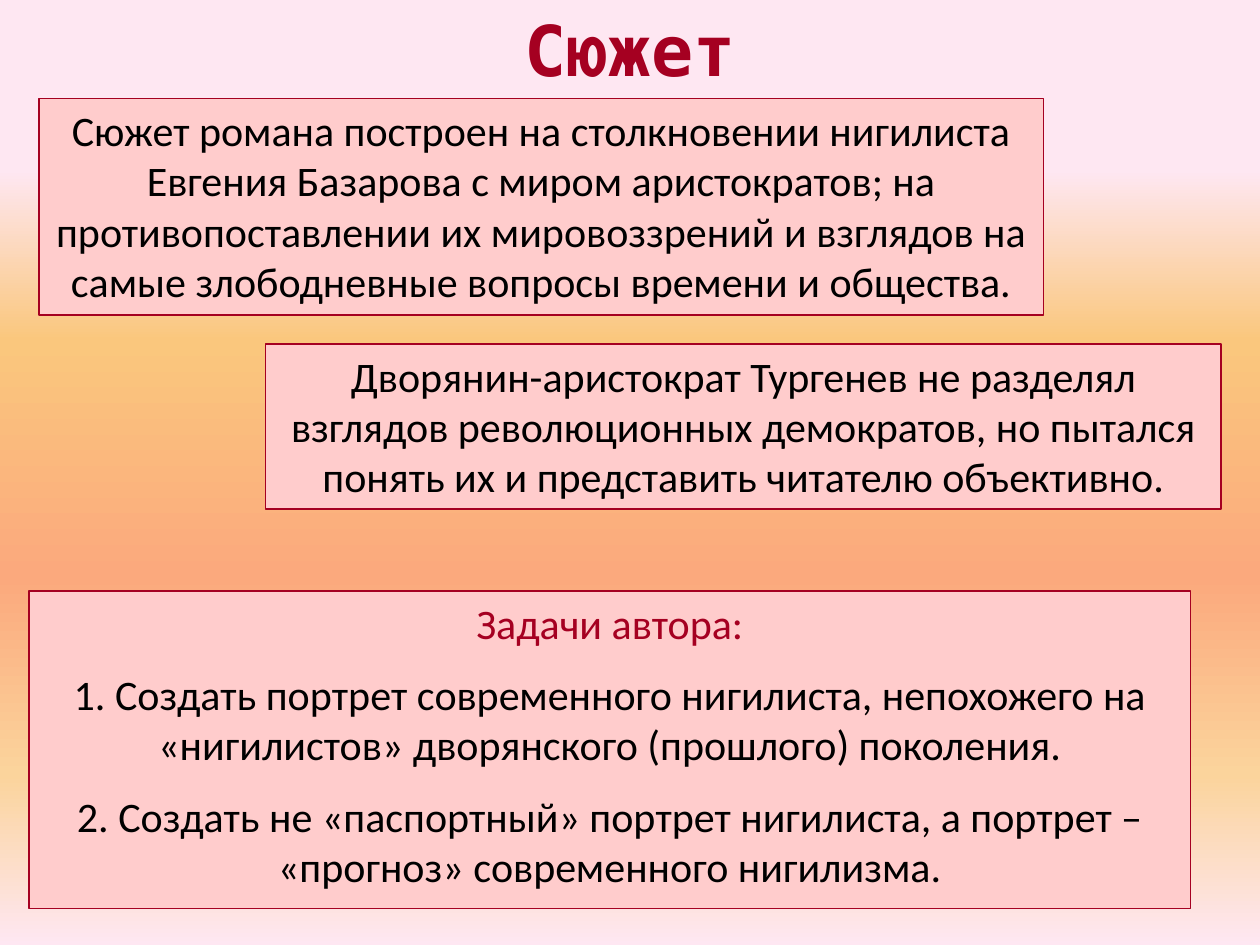
from lxml import etree
from pptx import Presentation
from pptx import util as u
from pptx.dml.color import RGBColor
from pptx.enum import shapes, text
from pptx.oxml.ns import qn

PX = 9144
CRIMSON, PINK, BLACK = "A50021", "FFCCCC", "000000"
SUNSET = [(18, "FEE7F2"), (36, "FAC77D"), (61, "FBA97D"), (82, "FBD49C"), (100, "FEE7F2")]


def color(value):
    return RGBColor.from_string(value)


class SlideBuilder:
    """Holds the slide and its style and draws each kind of element."""

    body_font, title_font = "Calibri", "DejaVu Sans Mono"
    body_size, title_size, gap = 24, 40, 12

    def __init__(self, slide):
        self.slide = slide

    def background(self, stops):
        fill = self.slide.background.fill
        fill.gradient()
        fill.gradient_angle = 270
        stop_list = next(self.slide.element.iter(qn("a:gsLst")))
        for old in list(stop_list):
            stop_list.remove(old)
        for percent, value in stops:
            stop = etree.SubElement(stop_list, qn("a:gs"), pos=str(percent * 1000))
            etree.SubElement(stop, qn("a:srgbClr"), val=value)

    def add_wording(self, frame, paragraphs, font, size, bold=False):
        frame.word_wrap = True
        frame.auto_size = text.MSO_AUTO_SIZE.SHAPE_TO_FIT_TEXT
        frame.vertical_anchor = text.MSO_ANCHOR.TOP
        for index, (wording, ink) in enumerate(paragraphs):
            line = frame.add_paragraph() if index else frame.paragraphs[0]
            line.alignment = text.PP_ALIGN.CENTER
            line.space_before = u.Pt(self.gap if index else 0)
            run = line.add_run()
            run.text = wording
            run.font.name, run.font.size, run.font.bold = font, u.Pt(size), bold
            run.font.color.rgb = color(ink)

    def title(self, box, wording):
        heading = self.slide.shapes.add_textbox(*(n * PX for n in box))
        self.add_wording(heading.text_frame, [(wording, CRIMSON)], self.title_font, self.title_size, True)

    def panel(self, box, paragraphs):
        panel = self.slide.shapes.add_shape(shapes.MSO_SHAPE.RECTANGLE, *(n * PX for n in box))
        panel.shadow.inherit = False
        panel.fill.solid()
        panel.fill.fore_color.rgb = color(PINK)
        panel.line.color.rgb = color(CRIMSON)
        panel.line.width = u.Pt(0.75)
        self.add_wording(panel.text_frame, paragraphs, self.body_font, self.body_size)


def main():
    deck = Presentation()
    deck.slide_width, deck.slide_height = 1000 * PX, 750 * PX
    plot = SlideBuilder(deck.slides.add_slide(deck.slide_layouts[6]))
    plot.background(SUNSET)
    plot.title((0, 0, 1000, 77), "Сюжет")
    plot.panel((31, 78, 797, 172), [
        ("Сюжет романа построен на столкновении нигилиста Евгения Базарова с миром "
         "аристократов; на противопоставлении их мировоззрений и взглядов на самые "
         "злободневные вопросы времени и общества.", BLACK)])
    plot.panel((211, 273, 758, 131), [
        ("Дворянин-аристократ Тургенев не разделял взглядов революционных демократов, "
         "но пытался понять их и представить читателю объективно.", BLACK)])
    plot.panel((23, 469, 922, 252), [
        ("Задачи автора:", CRIMSON),
        ("1. Создать портрет современного нигилиста, непохожего на «нигилистов» "
         "дворянского (прошлого) поколения.", BLACK),
        ("2. Создать не «паспортный» портрет нигилиста, а портрет – «прогноз» "
         "современного нигилизма.", BLACK)])
    deck.save("out.pptx")


if __name__ == "__main__":
    main()
